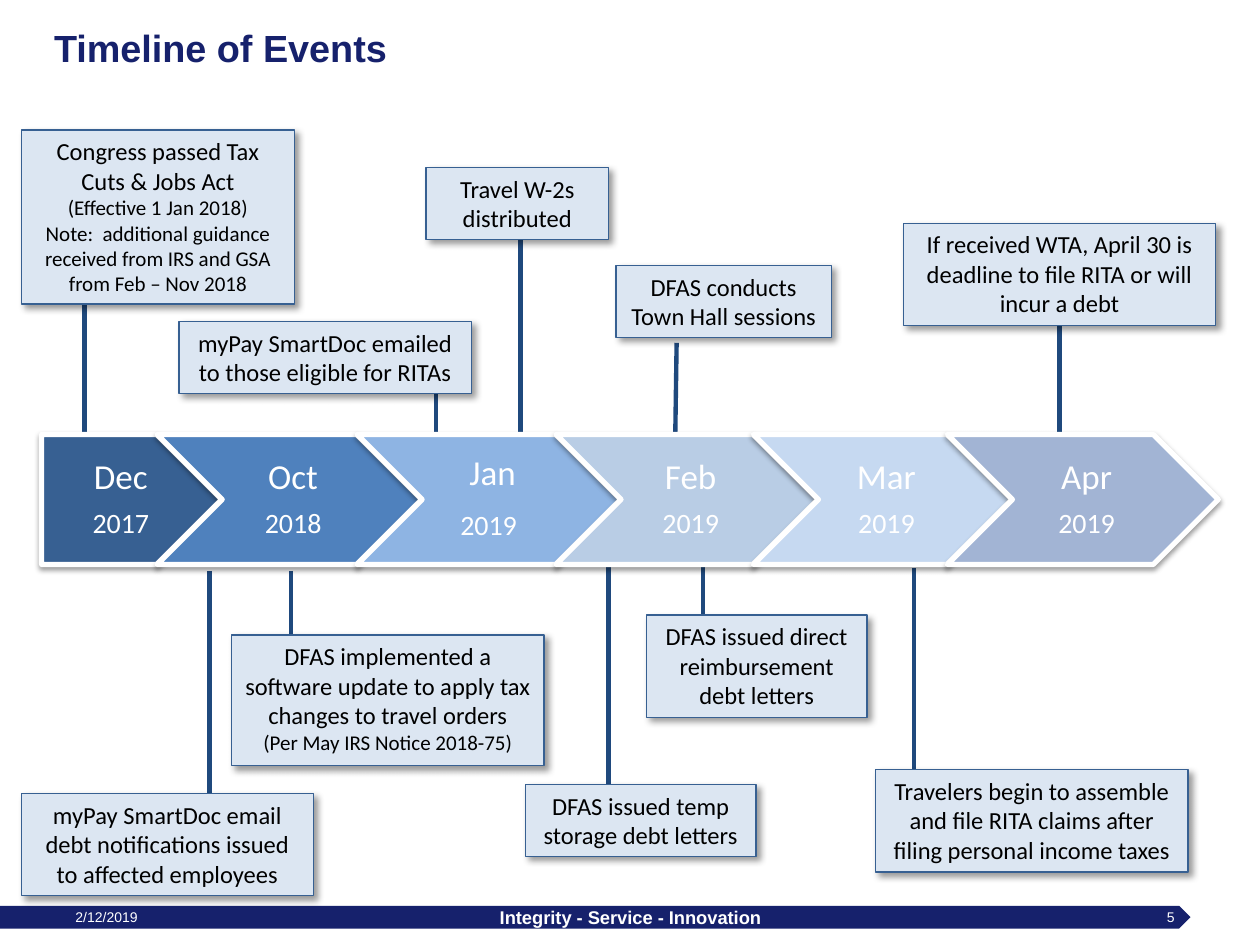
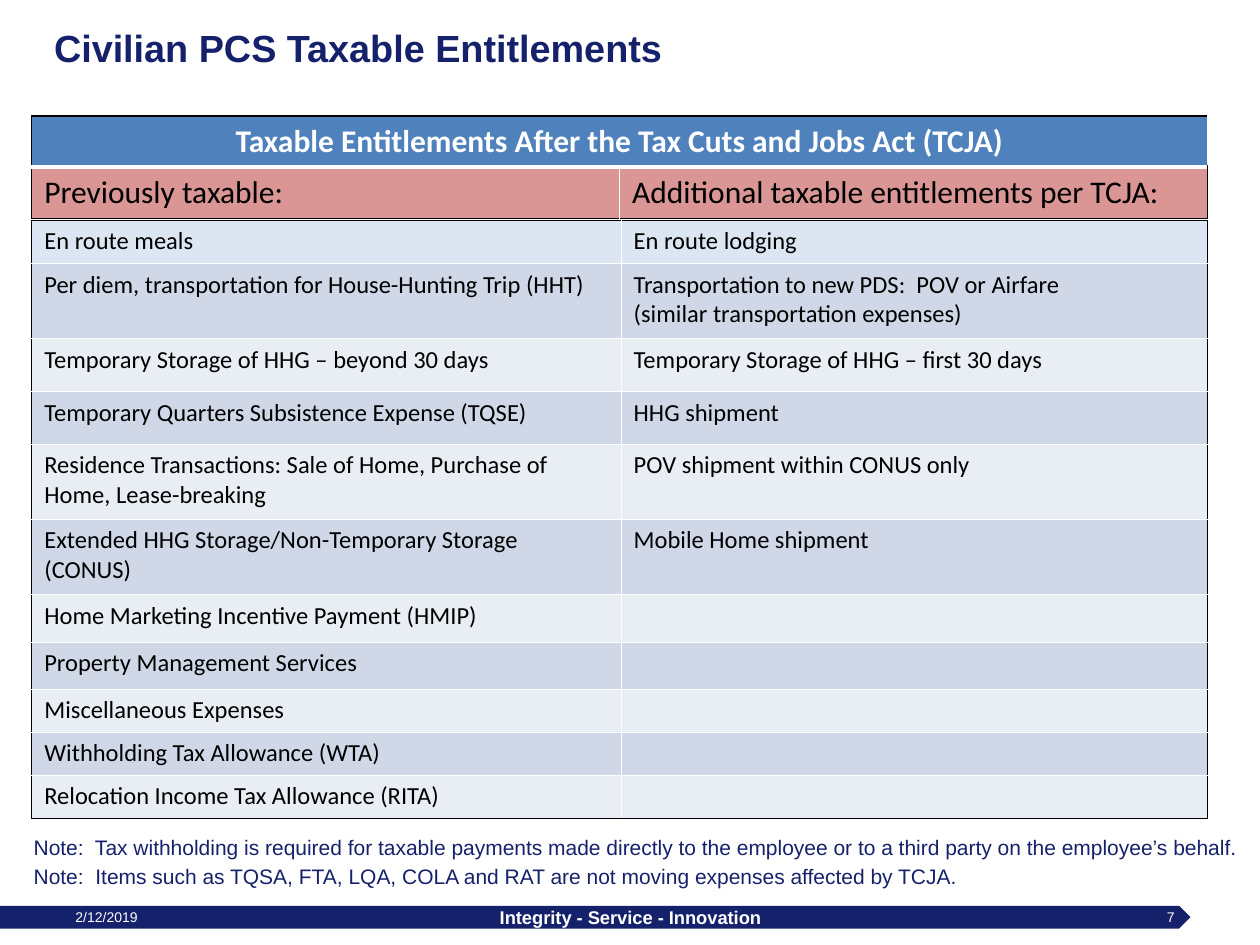
from collections import namedtuple

from lxml import etree
from pptx import Presentation
from pptx.dml.color import RGBColor
from pptx.enum.shapes import MSO_CONNECTOR, MSO_SHAPE
from pptx.enum.text import MSO_ANCHOR, MSO_AUTO_SIZE, PP_ALIGN
from pptx.oxml.ns import qn
from pptx.util import Cm, Pt

STRAIGHT = MSO_CONNECTOR.STRAIGHT
RECTANGLE, PENTAGON, CHEVRON = MSO_SHAPE.RECTANGLE, MSO_SHAPE.PENTAGON, MSO_SHAPE.CHEVRON
LEFT, CENTER, RIGHT = PP_ALIGN.LEFT, PP_ALIGN.CENTER, PP_ALIGN.RIGHT
TOP, MIDDLE = MSO_ANCHOR.TOP, MSO_ANCHOR.MIDDLE
GROW = MSO_AUTO_SIZE.SHAPE_TO_FIT_TEXT
BOTTOM_SITE = 2

NAVY, WHITE, BLACK = "16216C", "FFFFFF", "000000"
STEM_BLUE, CARD_FILL, CARD_LINE = "1F497D", "DCE6F2", "376092"
HEADER_BLUE, HEADER_RED = "4F81BD", "D99694"
BAND_DARK, BAND_LIGHT = "D0D8E8", "E9EDF4"

Box = namedtuple("Box", "left top width height")
Event = namedtuple("Event", "lines card stem")
Month = namedtuple("Month", "name year_runs fill width")
Shadow = namedtuple("Shadow", "opacity blur distance angle")

TITLE_BOX = Box(0.84, 0.43, 23.7, 1.07)
FOOTER_BOX = Box(0, 18.26, 24, 0.46)
TIMELINE_BOX = Box(0.43, 2.62, 24.13, 15.45)
HEADING_BOX = Box(0.64, 2.34, 23.7, 2.06)
ENTITLEMENT_BOX = Box(0.64, 4.44, 23.7, 12.06)
NOTE_BOX = Box(0.43, 16.7, 25.2, 1.5)

CARD_SHADOW = Shadow(40, 4, 3, 45)
MONTH_SHADOW = Shadow(38, 3.1, 1.6, 90)

# Cards are left, top, width, height; stems are x, y, x, y; all within the timeline.
EVENTS = [
    Event([("Congress passed Tax Cuts & Jobs Act", 14), ("(Effective 1 Jan 2018)", 12),
           ("Note:  additional guidance received from IRS and GSA from Feb – Nov 2018", 12)],
          Box(0, 0, 5.51, 3.51), (1.27, 2.03, 1.27, 6.52)),
    Event([("myPay SmartDoc email debt notifications issued to affected employees", 14)],
          Box(0, 13.38, 5.89, 2.06), (3.79, 8.89, 3.79, 13.46)),
    Event([("DFAS implemented a software update to apply tax changes to travel orders", 14),
           ("(Per May IRS Notice 2018-75)", 12)],
          Box(4.24, 10.18, 6.3, 2.64), (5.44, 8.89, 5.44, 10.41)),
    Event([("myPay SmartDoc emailed to those eligible for RITAs", 14)],
          Box(3.18, 3.86, 5.89, 1.45), (8.36, 5.33, 8.36, 6.35)),
    Event([("Travel W-2s distributed", 14)],
          Box(8.16, 0.76, 3.68, 1.45), (10.06, 2.21, 10.06, 6.27)),
    Event([("DFAS issued direct reimbursement debt letters", 14)],
          Box(12.6, 9.78, 4.45, 2.06), (13.74, 8.78, 13.74, 9.8)),
    Event([("Travelers begin to assemble and file RITA claims after filing personal income taxes", 14)],
          Box(17.22, 12.9, 6.3, 2.06), (17.99, 8.84, 17.99, 12.9)),
    Event([("If received WTA, April 30 is deadline to file RITA or will incur a debt", 14)],
          Box(17.78, 1.88, 6.3, 2.06), (20.93, 3.94, 20.93, 6.22)),
    Event([("DFAS conducts Town Hall sessions", 14)],
          Box(11.99, 2.74, 4.34, 1.45), (13.21, 4.29, 13.18, 6.32)),
    Event([("DFAS issued temp storage debt letters", 14)],
          Box(10.16, 13.2, 4.65, 1.45), (11.84, 8.73, 11.84, 13.31)),
]

MONTHS = [
    Month("Dec", [("2017", 16)], "376092", 3.63),
    Month("Oct", [("2018", 16)], "4F81BD", 5.33),
    Month("Jan", [("2019", 16), (" ", 20)], "8EB4E3", 5.31),
    Month("Feb", [("2019", 16)], "B9CDE5", 5.28),
    Month("Mar", [("2019", 16)], "C6D9F1", 5.21),
    Month("Apr", [("2019", 16)], "A2B4D4", 5.46),
]
MONTH_BAND = Box(0.41, 6.14, 23.7, 2.62)
MONTH_OVERLAP = 1.3

HEADINGS = [
    ["Taxable Entitlements After the Tax Cuts and Jobs Act (TCJA)", ""],
    ["Previously taxable:", "Additional taxable entitlements per TCJA:"],
]
ENTITLEMENTS = [
    ["En route meals", "En route lodging"],
    ["Per diem, transportation for House-Hunting Trip (HHT)",
     "Transportation to new PDS:  POV or Airfare\n(similar transportation expenses)"],
    ["Temporary Storage of HHG – beyond 30 days", "Temporary Storage of HHG – first 30 days"],
    ["Temporary Quarters Subsistence Expense (TQSE)", "HHG shipment"],
    ["Residence Transactions: Sale of Home, Purchase of Home, Lease-breaking",
     "POV shipment within CONUS only"],
    ["Extended HHG Storage/Non-Temporary Storage (CONUS)", "Mobile Home shipment"],
    ["Home Marketing Incentive Payment (HMIP)", ""],
    ["Property Management Services", ""],
    ["Miscellaneous Expenses", ""],
    ["Withholding Tax Allowance (WTA)", ""],
    ["Relocation Income Tax Allowance (RITA)", ""],
]
ENTITLEMENT_HEIGHTS = [0.87, 1.52, 1.06, 1.06, 1.52, 1.52, 0.95, 0.95, 0.87, 0.87, 0.87]
NOTES = [
    "Note:  Tax withholding is required for taxable payments made directly to the employee"
    " or to a third party on the employee’s behalf.",
    "Note:  Items such as TQSA, FTA, LQA, COLA and RAT are not moving expenses affected by TCJA.",
]


def color(hex_string):
    return RGBColor.from_string(hex_string)


def lengths(values):
    return [Cm(value) for value in values]


def inside(region, box):
    """Turn a box measured from the region's corner into a slide box."""
    return box._replace(left=region.left + box.left, top=region.top + box.top)


def apply_format(target, values):
    for name, value in values.items():
        setattr(target, name, value)


def write_text(frame, paragraphs, ink, font, layout=None, **frame_format):
    """Fill a text frame from paragraphs, each a list of (text, size) runs."""
    apply_format(frame, {"word_wrap": True, **frame_format})
    for index, runs in enumerate(paragraphs):
        paragraph = frame.add_paragraph() if index else frame.paragraphs[0]
        apply_format(paragraph, layout or {})
        if index == 0:
            paragraph.space_before = Pt(0)
        for text, size in runs:
            run = paragraph.add_run()
            run.text = text
            apply_format(run.font, {"size": Pt(size), **font})
            run.font.color.rgb = color(ink)


def add_label(slide, box, paragraphs, ink, bold=False, anchor=MIDDLE, **layout):
    label = slide.shapes.add_textbox(*lengths(box))
    write_text(label.text_frame, paragraphs, ink, {"name": "Arial", "bold": bold},
               layout, vertical_anchor=anchor)


def add_filled_shape(slide, kind, box, fill, line=None, line_width=0, shadow=None):
    shape = slide.shapes.add_shape(kind, *lengths(box))
    shape.fill.solid()
    shape.fill.fore_color.rgb = color(fill)
    if line:
        shape.line.color.rgb = color(line)
        shape.line.width = Pt(line_width)
    else:
        shape.line.fill.background()
    shape.shadow.inherit = False
    if shadow:
        effects = shape._element.spPr.find(qn("a:effectLst"))
        outer = etree.SubElement(effects, qn("a:outerShdw"), {
            "blurRad": str(Pt(shadow.blur)), "dist": str(Pt(shadow.distance)),
            "dir": str(shadow.angle * 60000), "algn": "tl", "rotWithShape": "0"})
        shade = etree.SubElement(outer, qn("a:srgbClr"), val=BLACK)
        etree.SubElement(shade, qn("a:alpha"), val=str(shadow.opacity * 1000))
    return shape


def add_title(slide, box, title):
    add_label(slide, box, [[(title, 21.6)]], NAVY, bold=True)


def add_footer(slide, box, number):
    add_filled_shape(slide, PENTAGON, box, NAVY)
    parts = [("2/12/2019", 8, 1.27, 5.92, LEFT, False),
             ("Integrity - Service - Innovation", 10.5, 8.69, 8.05, CENTER, True),
             (str(number), 8, 18.21, 5.72, RIGHT, False)]
    for text, size, left, width, alignment, bold in parts:
        part = inside(box, Box(left, 0, width, box.height))
        add_label(slide, part, [[(text, size)]], WHITE, bold, alignment=alignment)


def add_event(slide, region, event):
    x1, y1, x2, y2 = event.stem
    ends = lengths((region.left + x1, region.top + y1, region.left + x2, region.top + y2))
    stem = slide.shapes.add_connector(STRAIGHT, *ends)
    stem.line.color.rgb = color(STEM_BLUE)
    stem.line.width = Pt(2.5)
    etree.SubElement(stem._element.spPr, qn("a:effectLst"))
    card = add_filled_shape(slide, RECTANGLE, inside(region, event.card), CARD_FILL,
                            CARD_LINE, 0.75, CARD_SHADOW)
    write_text(card.text_frame, [[line] for line in event.lines], BLACK, {"name": "Calibri"},
               {"alignment": CENTER}, vertical_anchor=TOP, auto_size=GROW)
    if abs(event.card.left + event.card.width / 2 - x1) < 0.02:
        stem.begin_connect(card, BOTTOM_SITE)


def add_month_band(slide, box):
    left = box.left
    for index, month in enumerate(MONTHS):
        arrow = add_filled_shape(slide, CHEVRON if index else PENTAGON,
                                 Box(left, box.top, month.width, box.height),
                                 month.fill, WHITE, 3, MONTH_SHADOW)
        write_text(arrow.text_frame, [[(month.name, 20)], month.year_runs], WHITE,
                   {"name": "Calibri"},
                   {"alignment": CENTER, "line_spacing": 0.9, "space_after": Pt(7)},
                   vertical_anchor=MIDDLE, margin_left=Cm(0.23 if index else 0.3),
                   margin_right=Cm(0.08), margin_top=Cm(0.15), margin_bottom=Cm(0.15))
        left += month.width - MONTH_OVERLAP


def add_timeline(slide, region):
    for event in EVENTS:
        add_event(slide, region, event)
    add_month_band(slide, inside(region, MONTH_BAND))


def set_borders(cell, borders):
    """Draw the cell's edges from (tag, colour, width) in schema order."""
    properties = cell._tc.get_or_add_tcPr()
    for tag, ink, width in borders:
        edge = etree.SubElement(properties, qn(f"a:{tag}"), w=str(Pt(width)))
        fill = etree.SubElement(edge, qn("a:solidFill"))
        etree.SubElement(fill, qn("a:srgbClr"), val=ink)


def add_grid(slide, box, rows, widths, heights, fills, size, inner_widths):
    """Add a table with a black outline and white inner lines (vertical, horizontal)."""
    table = slide.shapes.add_table(len(rows), len(widths), *lengths(box)).table
    apply_format(table, {"first_row": False, "horz_banding": False})
    for column, width in zip(table.columns, widths):
        column.width = Cm(width)
    vertical, horizontal = inner_widths
    last_row, last_column = len(rows) - 1, len(widths) - 1
    for r, texts in enumerate(rows):
        table.rows[r].height = Cm(heights[r])
        for c, text in enumerate(texts):
            cell = table.cell(r, c)
            edges = [("lnL", c == 0, vertical), ("lnR", c == last_column, vertical),
                     ("lnT", r == 0, horizontal), ("lnB", r == last_row, horizontal)]
            set_borders(cell, [(tag, BLACK, 1) if outer else (tag, WHITE, width)
                               for tag, outer, width in edges])
            cell.fill.solid()
            cell.fill.fore_color.rgb = color(fills[r])
            if text:
                write_text(cell.text_frame, [[(line, size)] for line in text.split("\n")],
                           BLACK, {"name": "Calibri", "bold": False})
            else:
                ending = cell.text_frame.paragraphs[0]._p.get_or_add_endParaRPr()
                ending.set("sz", str(size * 100))
    return table


def add_heading_table(slide, box):
    table = add_grid(slide, box, HEADINGS, [box.width / 2] * 2, [box.height / 2] * 2,
                     [HEADER_BLUE, HEADER_RED], 18, (1, 3))
    banner = table.cell(0, 0)
    banner.merge(table.cell(0, 1))
    paragraph = banner.text_frame.paragraphs[0]
    paragraph.alignment = CENTER
    font = paragraph.runs[0].font
    font.bold = True
    font.color.rgb = color(WHITE)


def add_entitlement_table(slide, box):
    fills = [CARD_FILL] + [BAND_DARK if row % 2 else BAND_LIGHT
                           for row in range(1, len(ENTITLEMENTS))]
    add_grid(slide, box, ENTITLEMENTS, [11.88, box.width - 11.88], ENTITLEMENT_HEIGHTS,
             fills, 14, (0.5, 0.5))


def add_notes_text(slide, box):
    add_label(slide, box, [[(note, 12)] for note in NOTES], NAVY,
              anchor=TOP, space_before=Pt(2.4))


def add_slide(presentation, title, number):
    slide = presentation.slides.add_slide(presentation.slide_layouts[6])
    add_footer(slide, FOOTER_BOX, number)
    add_title(slide, TITLE_BOX, title)
    return slide


def main():
    presentation = Presentation()
    apply_format(presentation, {"slide_width": Cm(25.4), "slide_height": Cm(19.05)})
    add_timeline(add_slide(presentation, "Timeline of Events", 5), TIMELINE_BOX)
    slide = add_slide(presentation, "Civilian PCS Taxable Entitlements", 7)
    add_heading_table(slide, HEADING_BOX)
    add_entitlement_table(slide, ENTITLEMENT_BOX)
    add_notes_text(slide, NOTE_BOX)
    presentation.save("out.pptx")


if __name__ == "__main__":
    main()
